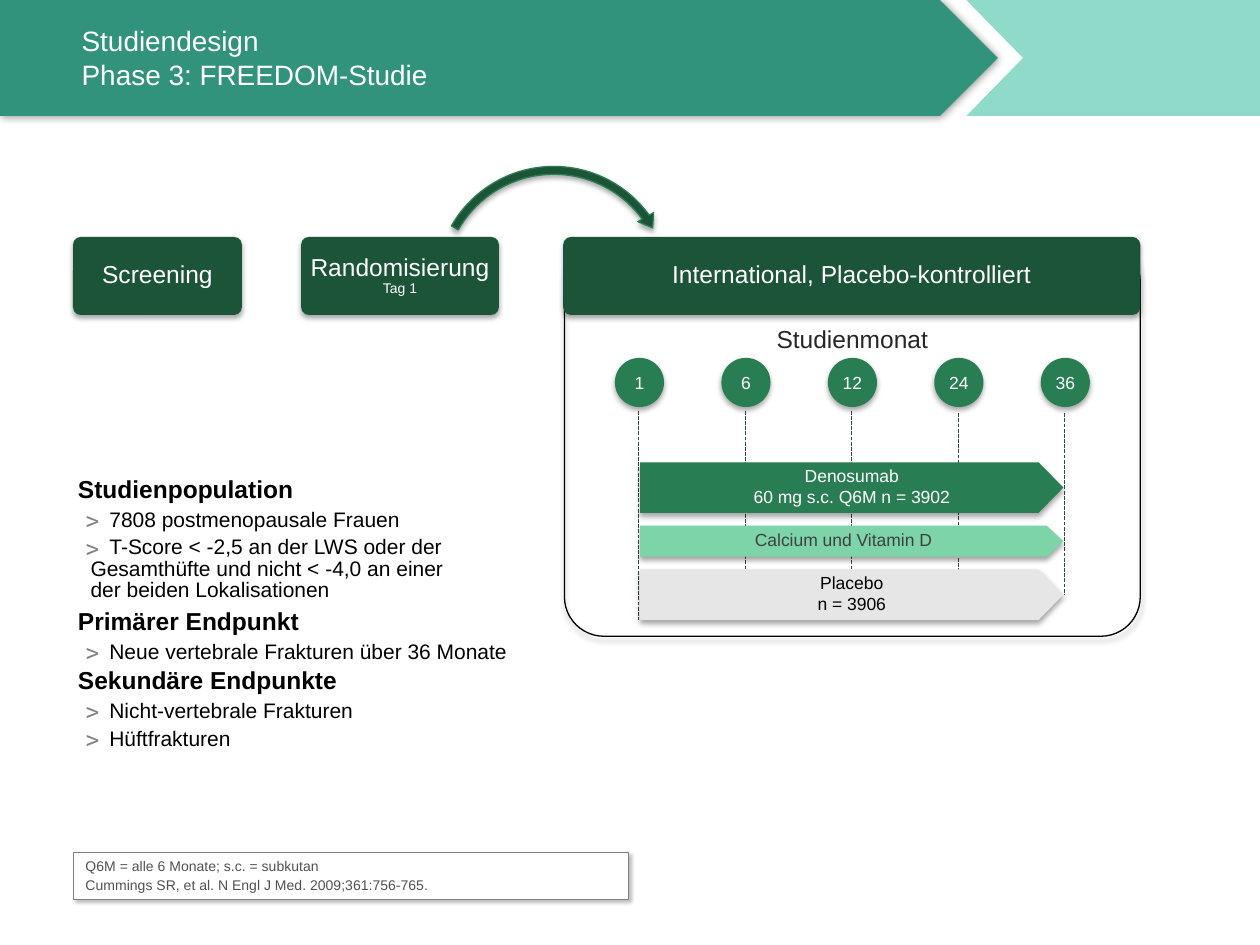
from copy import deepcopy
from lxml.etree import SubElement as Sub
from pptx import Presentation
from pptx.dml.color import RGBColor
from pptx.enum.dml import MSO_LINE as Dash
from pptx.enum.shapes import MSO_CONNECTOR as Link, MSO_SHAPE as Kind
from pptx.enum.text import MSO_ANCHOR as Anchor, PP_ALIGN as Align
from pptx.oxml.ns import qn
from pptx.util import Inches, Pt

WHITE = RGBColor(0xFF, 0xFF, 0xFF)
BLACK = RGBColor(0, 0, 0)
MINT = RGBColor(0x8F, 0xDA, 0xC8)
TEAL = RGBColor(0x31, 0x93, 0x7B)
DARK = RGBColor(0x1C, 0x54, 0x38)
GREEN = RGBColor(0x29, 0x7D, 0x53)
LIGHT = RGBColor(0x7D, 0xD4, 0xA9)
PALE = RGBColor(0xE6, 0xE6, 0xE6)
GREY = RGBColor(0x80, 0x80, 0x80)
SLATE = RGBColor(0x34, 0x47, 0x3D)
NOTE = RGBColor(0x51, 0x51, 0x51)
INK = RGBColor(0x26, 0x26, 0x26)
COAL = RGBColor(0x40, 0x40, 0x40)
SOFT = (35, 3.1, 1.8, 90)

deck = Presentation()
deck.slide_width, deck.slide_height = Inches(10), Inches(7.5)
slide = deck.slides.add_slide(deck.slide_layouts[6])
shapes = slide.shapes


def put(kind, box, fill=None, shade=SOFT, line=None, adj=()):
    shape = shapes.add_shape(kind, *map(Inches, box))
    for i, value in enumerate(adj):
        shape.adjustments[i] = value
    if fill is None:
        shape.fill.background()
    else:
        shape.fill.solid()
        shape.fill.fore_color.rgb = fill
    if line:
        shape.line.color.rgb, shape.line.width = line[0], Pt(line[1])
    else:
        shape.line.fill.background()
    shape.shadow.inherit = False
    alpha, blur, dist, angle = shade
    glow = Sub(shape._element.spPr.find(qn("a:effectLst")), qn("a:outerShdw"),
               blurRad=str(Pt(blur)), dist=str(Pt(dist)), dir=str(angle * 60000),
               algn="ctr", rotWithShape="0")
    color = Sub(glow, qn("a:srgbClr"), val="000000")
    Sub(color, qn("a:alpha"), val=str(alpha * 1000))
    return shape


def write(shape, rows, color, align=Align.CENTER, anchor=Anchor.MIDDLE,
          pad=(0, 0, 0, 0), space=1.0):
    frame = shape.text_frame
    sides = ("margin_left", "margin_top", "margin_right", "margin_bottom")
    look = dict(zip(sides, map(Inches, pad)), word_wrap=True, vertical_anchor=anchor)
    for name, value in look.items():
        setattr(frame, name, value)
    for i, (text, size, before) in enumerate(rows):
        para = frame.paragraphs[0] if i == 0 else frame.add_paragraph()
        para.text = text
        look = dict(alignment=align, line_spacing=space, space_before=Pt(before))
        for name, value in look.items():
            setattr(para, name, value)
        for run in para.runs:
            run.font.color.rgb = color
            for name, value in dict(name="Arial", size=Pt(size)).items():
                setattr(run.font, name, value)
        for gap in para._p.findall(qn("a:br")):
            gap.append(deepcopy(para.runs[0]._r.rPr))
    return frame


pen = shapes.build_freeform(Inches(7.67), 0)
pen.add_line_segments([(Inches(x), Inches(y)) for x, y in
                       ((10, 0), (10, 0.92), (7.67, 0.92), (8.12, 0.46))])
edge = pen.convert_to_shape()
edge.fill.solid()
edge.fill.fore_color.rgb = MINT
edge.line.fill.background()
edge.shadow.inherit = False
put(Kind.PENTAGON, (0, 0, 7.92, 0.92), TEAL, (40, 5, 0, 0))

pad = (0.1, 0.05, 0.1, 0.05)
foot = put(Kind.RECTANGLE, (0.58, 6.76, 4.41, 0.38), WHITE, (25, 2, 2, 45), (GREY, 0.25))
write(foot, [("Q6M = alle 6 Monate; s.c. = subkutan", 8, 2.4),
             ("Cummings SR, et al. N Engl J Med. 2009;361:756-765.", 8, 2.4)],
      NOTE, Align.LEFT, Anchor.BOTTOM, pad, 0.9)
title = shapes.add_textbox(*map(Inches, (0.55, 0.12, 6.7, 0.67)))
write(title, [("Studiendesign\vPhase 3: FREEDOM-Studie", 16, 0)], WHITE, Align.LEFT, pad=pad)

for i, (top, end) in enumerate([(3.26, 4.92), (3.26, 4.52), (3.26, 4.52),
                                (3.28, 4.54), (3.28, 4.72)]):
    x = 5.07 + 0.845 * i
    rule = shapes.add_connector(Link.STRAIGHT, *map(Inches, (x, top, x, end)))
    rule.line.color.rgb = SLATE
    rule.line.width = Pt(0.75)
    rule.line.dash_style = Dash.SQUARE_DOT
    Sub(rule._element.spPr, qn("a:effectLst"))

put(Kind.ROUNDED_RECTANGLE, (4.48, 1.92, 4.57, 3.13), line=(BLACK, 0.75), adj=[0.1])

body = [
    ("Studienpopulation", 14, 0),
    ("7808 postmenopausale Frauen", 12, 3.6),
    ("T-Score < -2,5 an der LWS oder der \vGesamthüfte und nicht < -4,0 an einer "
     "\vder beiden Lokalisationen", 12, 3.6),
    ("Primärer Endpunkt", 14, 4.2),
    ("Neue vertebrale Frakturen über 36 Monate", 12, 3.6),
    ("Sekundäre Endpunkte", 14, 2.8),
    ("Nicht-vertebrale Frakturen", 12, 3.6),
    ("Hüftfrakturen", 12, 3.6),
]
area = shapes.add_textbox(*map(Inches, (0.52, 3.75, 4.65, 2.04)))
frame = write(area, body, BLACK, Align.LEFT, Anchor.TOP, pad, 0.85)
for para, (text, size, before) in zip(frame.paragraphs, body):
    if size == 14:
        para.runs[0].font.bold = True
        para.line_spacing = 0.9 if before else 0.85
        continue
    props = para._p.get_or_add_pPr()
    props.set("marL", str(Inches(0.1)))
    props.set("indent", str(Inches(-0.1)))
    Sub(Sub(props, qn("a:buClr")), qn("a:srgbClr"), val=str(GREY))
    Sub(props, qn("a:buSzPct"), val="150000")
    Sub(props, qn("a:buFont"), typeface="Arial")
    Sub(props, qn("a:buChar"), char="﹥")

month = shapes.add_textbox(*map(Inches, (4.48, 2.58, 4.57, 0.25)))
write(month, [("Studienmonat", 14, 0)], INK, anchor=Anchor.TOP, pad=(0.02,) * 4, space=0.9)

for kind, top, high, fill, adj, color, rows, left in [
    (Kind.PENTAGON, 3.67, 0.4, GREEN, [0.49], WHITE,
     ["Denosumab", "60 mg s.c. Q6M n = 3902"], 0.1),
    (Kind.PENTAGON, 4.52, 0.4, PALE, [0.49], BLACK, ["Placebo", "n = 3906"], 0.1),
    (Kind.RIGHT_ARROW, 4.17, 0.25, LIGHT, [0.98, 0.54], COAL, ["Calcium und Vitamin D"], 0),
]:
    bar = put(kind, (5.08, top, 3.36, high), fill, adj=adj)
    write(bar, [(row, 10, 0) for row in rows], color, pad=(left, 0, 0, 0.03))

for i, label in enumerate(["1", "6", "12", "24", "36"]):
    dot = put(Kind.OVAL, (4.88 + 0.845 * i, 2.84, 0.39, 0.39), GREEN)
    write(dot, [(label, 10, 0)], WHITE)

for left, wide, rows in [
    (0.58, 1.34, [("Screening", 14, 0)]),
    (2.39, 1.57, [("Randomisierung", 14, 0), ("Tag 1", 8, 0)]),
    (4.47, 4.58, [("International, Placebo-kontrolliert", 14, 0)]),
]:
    head = put(Kind.ROUNDED_RECTANGLE, (left, 1.88, wide, 0.62), DARK, adj=[0.1])
    write(head, rows, WHITE, pad=(0.03, 0.02, 0.03, 0.02), space=0.9)

arc = put(Kind.LEFT_CIRCULAR_ARROW, (3.42, 1.28, 1.95, 1.95), DARK, line=(GREEN, 0.75),
          adj=[0.032, 3.883, 21.638, 90.245, 0.037])
arc._element.spPr.find(qn("a:xfrm")).set("flipV", "1")

deck.save("out.pptx")
